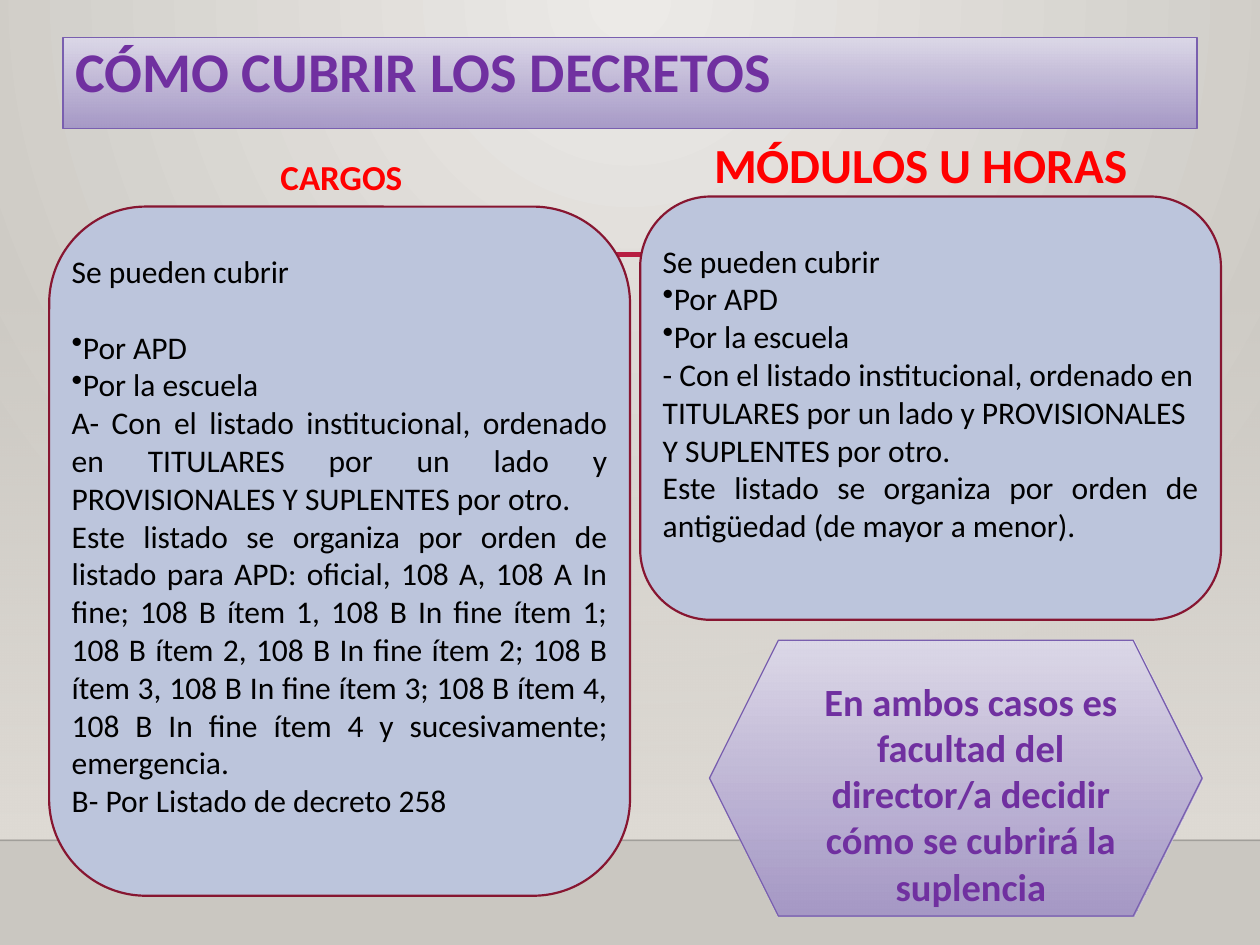
import pptx
import pptx.dml.color
import pptx.enum.shapes
import pptx.enum.text
import pptx.oxml.ns
import pptx.oxml.xmlchemy
import pptx.util
from dataclasses import dataclass

Pt = pptx.util.Pt
qn = pptx.oxml.ns.qn
new_element = pptx.oxml.xmlchemy.OxmlElement
Shape = pptx.enum.shapes.MSO_SHAPE
Align = pptx.enum.text.PP_ALIGN
Anchor = pptx.enum.text.MSO_ANCHOR


@dataclass(frozen=True)
class Theme:
    font: str = "Calibri"
    purple: str = "7030A0"
    red: str = "FF0000"
    black: str = "000000"
    card: str = "BCC5DC"
    card_line: str = "871631"
    lilac: tuple = (("DCD8E8", 100), ("A395C6", 92))
    lilac_line: str = "795FAF"
    backdrop: tuple = (("ECEAE7", 100), ("CAC7C1", 100))
    wall: tuple = (("DFDBD5", 0), ("DFDBD5", 100))
    floor_line: str = "000001"
    accent: str = "B71E42"
    title_size: int = 32
    heading_size: int = 28
    note_size: int = 22
    label_size: int = 20
    body_size: int = 18


THEME = Theme()


def rgb(value):
    return pptx.dml.color.RGBColor.from_string(value)


def set_values(target, values):
    for name, value in values.items():
        setattr(target, name, value)


def add_alpha(color_element, percent):
    if percent < 100:
        alpha = new_element("a:alpha")
        alpha.set("val", str(percent * 1000))
        color_element.append(alpha)


def fill_gradient(fill, owner, stops):
    """Vertical two-colour gradient; each stop is (colour, opacity)."""
    fill.gradient()
    fill.gradient_angle = 270
    for stop, (color, _) in zip(fill.gradient_stops, stops):
        stop.color.rgb = rgb(color)
    for element, (_, percent) in zip(owner.iter(qn("a:gs")), stops):
        add_alpha(element[0], percent)


def paint_background(page):
    fill_gradient(page.background.fill, page._element, THEME.backdrop)
    linear = next(page._element.iter(qn("a:lin")))
    circle = new_element("a:path")
    circle.set("path", "circle")
    focus = new_element("a:fillToRect")
    for side, percent in {"l": 43, "t": 0, "r": 43, "b": 100}.items():
        focus.set(side, str(percent * 1000))
    circle.append(focus)
    linear.getparent().replace(linear, circle)


def add_panel(page, kind, place, fill, line=None, width=0.75):
    panel = page.shapes.add_shape(kind, *map(Pt, place))
    panel.shadow.inherit = False
    if isinstance(fill, str):
        panel.fill.solid()
        panel.fill.fore_color.rgb = rgb(fill)
    else:
        fill_gradient(panel.fill, panel._element, fill)
    if line:
        panel.line.color.rgb = rgb(line)
        panel.line.width = Pt(width)
    else:
        panel.line.fill.background()
    return panel


def add_rule(page, left, right, top, color, width, opacity=100):
    rule = page.shapes.add_connector(
        pptx.enum.shapes.MSO_CONNECTOR.STRAIGHT, Pt(left), Pt(top), Pt(right), Pt(top))
    rule.line.color.rgb = rgb(color)
    rule.line.width = Pt(width)
    add_alpha(next(rule._element.spPr.iter(qn("a:srgbClr"))), opacity)
    rule._element.spPr.append(new_element("a:effectLst"))


def write(box, lines, size, color, bold=False, anchor=Anchor.TOP):
    """Each line is (text, paragraph values); 'bullet' marks a list item."""
    set_values(box.text_frame, {"word_wrap": True, "vertical_anchor": anchor})
    for index, (text, values) in enumerate(lines):
        para = box.text_frame.paragraphs[0] if index == 0 else box.text_frame.add_paragraph()
        values = {"alignment": Align.LEFT, **values}
        bullet = values.pop("bullet", False)
        set_values(para, values)
        if bullet:
            mark = new_element("a:buChar")
            mark.set("char", "•")
            para._p.get_or_add_pPr().append(mark)
        span = para.add_run()
        span.text = text
        set_values(span.font, {"name": THEME.font, "size": Pt(size), "bold": bold})
        span.font.color.rgb = rgb(color)


def add_text(page, place, lines, size, color, **options):
    box = page.shapes.add_textbox(*map(Pt, place))
    write(box, lines, size, color, **options)


def add_card(page, place, text_height, lines):
    left, top, width, _ = place
    add_panel(page, Shape.ROUNDED_RECTANGLE, place, THEME.card, THEME.card_line, 1.25)
    add_text(page, (left + 5.8, top + 22.3, width - 11.5, text_height), lines,
             THEME.body_size, THEME.black)


def main():
    deck = pptx.Presentation()
    set_values(deck, {"slide_width": Pt(720), "slide_height": Pt(540)})
    page = deck.slides.add_slide(deck.slide_layouts[6])
    center = {"alignment": Align.CENTER}
    justify = {"alignment": Align.JUSTIFY}
    item = {"bullet": True}

    # Backdrop: wall, floor edge and accent rule
    paint_background(page)
    add_panel(page, Shape.RECTANGLE, (0, 158.4, 720, 321.5), THEME.wall)
    add_rule(page, 0, 720, 480.2, THEME.floor_line, 1, opacity=20)
    add_rule(page, 113.8, 631.4, 145.4, THEME.accent, 2.5)

    # Title
    title = add_panel(page, Shape.RECTANGLE, (36, 21.6, 648, 51.8),
                      THEME.lilac, THEME.lilac_line)
    write(title, [("CÓMO CUBRIR LOS DECRETOS", {"line_spacing": 0.9})],
          THEME.title_size, THEME.purple, bold=True)

    # Left column
    add_text(page, (36, 78.5, 318.2, 39.6), [("CARGOS", {**center, "line_spacing": 1.2})],
             THEME.label_size, THEME.red, bold=True, anchor=Anchor.MIDDLE)
    add_card(page, (28.1, 118.1, 331.9, 393.8), 334, [
        ("Se pueden cubrir", {"space_after": Pt(21.6)}),
        ("Por APD", item),
        ("Por la escuela", item),
        ("A- Con el listado institucional, ordenado en TITULARES por un lado y "
         "PROVISIONALES Y SUPLENTES por otro.", justify),
        ("Este listado se organiza por orden de listado para APD: oficial, 108 A, "
         "108 A In fine; 108 B ítem 1, 108 B In fine ítem 1; 108 B ítem 2, "
         "108 B In fine ítem 2; 108 B ítem 3, 108 B In fine ítem 3; 108 B ítem 4, "
         "108 B In fine ítem 4 y sucesivamente; emergencia.", justify),
        ("B- Por Listado de decreto 258", justify),
    ])

    # Right column
    add_text(page, (365.8, 73.4, 320.4, 41), [("MÓDULOS U HORAS", center)],
             THEME.heading_size, THEME.red, bold=True)
    add_card(page, (365.8, 112.3, 331.9, 241.9), 203.8, [
        ("Se pueden cubrir", {}),
        ("Por APD", item),
        ("Por la escuela", item),
        ("- Con el listado institucional, ordenado en TITULARES por un lado y "
         "PROVISIONALES Y SUPLENTES por otro.", {}),
        ("Este listado se organiza por orden de antigüedad (de mayor a menor).", justify),
    ])

    # Closing note
    add_panel(page, Shape.HEXAGON, (405.4, 365.8, 281.5, 157.7),
              THEME.lilac, THEME.lilac_line)
    add_text(page, (450.7, 383.8, 208.1, 140.4),
             [("En ambos casos es facultad del director/a decidir cómo se cubrirá "
               "la suplencia", center)],
             THEME.note_size, THEME.purple, bold=True)

    deck.save("out.pptx")


if __name__ == "__main__":
    main()
